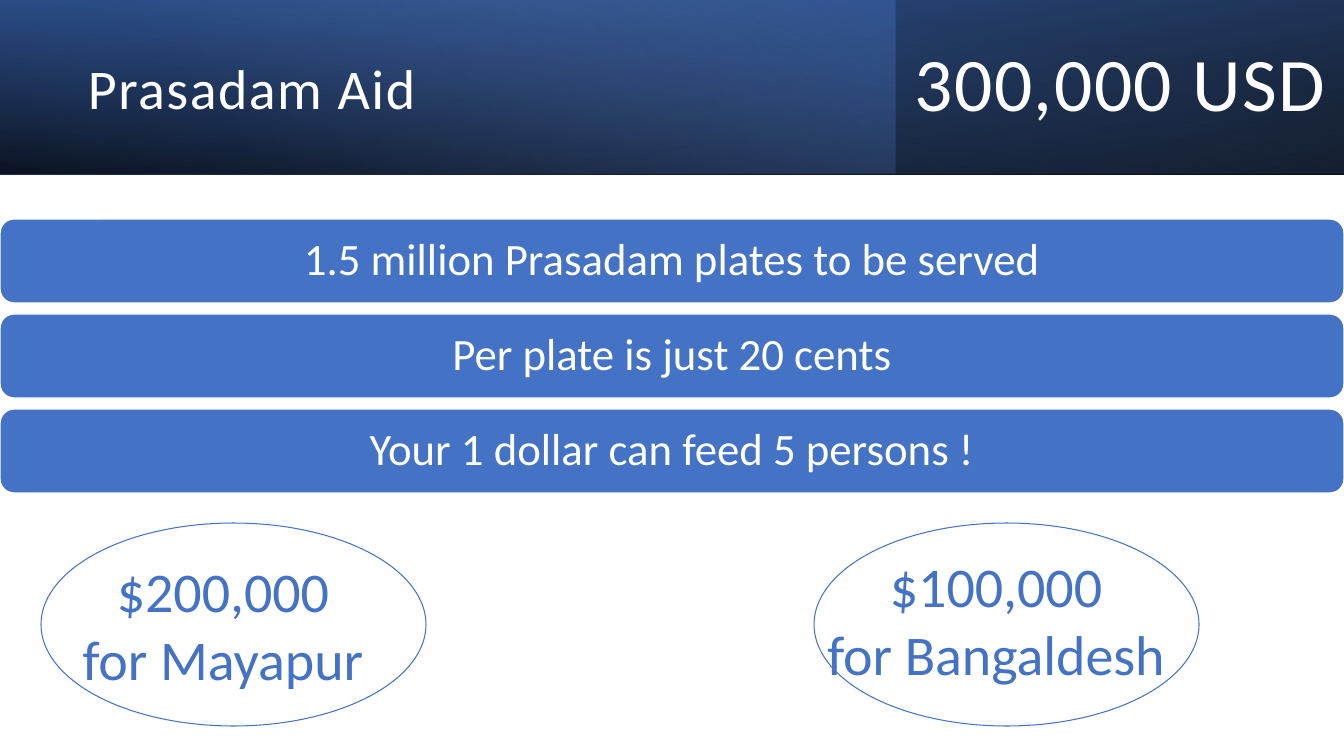
from lxml import etree
from pptx import Presentation
from pptx import util as u
from pptx.dml.color import RGBColor
from pptx.enum import shapes, text
from pptx.oxml import ns

PX = 914400 / 100.8
WHITE = RGBColor(0xFF, 0xFF, 0xFF)
BLUE = RGBColor(0x44, 0x72, 0xC4)
NAVY = RGBColor(0x2F, 0x55, 0x97)
PALE = RGBColor(0x8F, 0xAA, 0xDC)
BLACK = RGBColor(0, 0, 0)
KIND = shapes.MSO_SHAPE

deck = Presentation()
deck.slide_width, deck.slide_height = u.Inches(13.333), u.Inches(7.5)
slide = deck.slides.add_slide(deck.slide_layouts[6])


def add(kind, *box):
    area = [round(n * PX) for n in box]
    if kind is None:
        return slide.shapes.add_textbox(*area)
    shape = slide.shapes.add_shape(kind, *area)
    shape.shadow.inherit = False
    return shape


def write(shape, words, size, color, align, lead=0.9, track=0):
    frame = shape.text_frame
    frame.text = words
    frame.word_wrap = True
    frame.vertical_anchor = text.MSO_ANCHOR.MIDDLE
    for para in frame.paragraphs:
        para.alignment = align
        para.line_spacing = lead
        for run in para.runs:
            run.font.name = "Calibri"
            run.font.size = u.Pt(size)
            run.font.color.rgb = color
            if track:
                run.font._element.set("spc", str(track))
    return frame


LEFT, MID = text.PP_ALIGN.LEFT, text.PP_ALIGN.CENTER

layers = [
    (1344, 180, True, 100, [(0, BLACK, 96), (100, NAVY, 100)]),
    (896, 0, False, 140, [(0, BLUE, 41), (74, PALE, 0)]),
    (1344, 0, True, 260, [(0, BLACK, 63), (78, BLUE, 15)]),
]
for width, turn, flip, angle, stops in layers:
    band = add(KIND.RECTANGLE, 0, 0, width, 174)
    band.rotation = turn
    band.line.fill.background()
    props = band._element.spPr
    if flip:
        props.xfrm.set("flipH", "1")
    grad = etree.Element(ns.qn("a:gradFill"), rotWithShape="1")
    row = etree.SubElement(grad, ns.qn("a:gsLst"))
    for pos, color, alpha in stops:
        stop = etree.SubElement(row, ns.qn("a:gs"), pos=str(pos * 1000))
        tint = etree.SubElement(stop, ns.qn("a:srgbClr"), val=str(color))
        etree.SubElement(tint, ns.qn("a:alpha"), val=str(alpha * 1000))
    etree.SubElement(grad, ns.qn("a:lin"), ang=str(angle * 60000), scaled="0")
    props.find(ns.qn("a:prstGeom")).addnext(grad)

write(add(None, 78, 27, 778, 128), "Prasadam Aid", 40, WHITE, LEFT, track=110)
write(add(None, 896, 0, 448, 174), "300,000 USD", 54, WHITE, MID, track=110)

facts = [
    "1.5 million Prasadam plates to be served",
    "Per plate is just 20 cents",
    "Your 1 dollar can feed 5 persons !",
]
for i, fact in enumerate(facts):
    bar = add(KIND.ROUNDED_RECTANGLE, 0, 219 + 95 * i, 1344, 84)
    bar.fill.solid()
    bar.fill.fore_color.rgb = BLUE
    bar.line.color.rgb = WHITE
    bar.line.width = u.Pt(1)
    write(bar, fact, 32, WHITE, MID)

shares = [
    (41, 82, 551, 304, "$200,000\nfor Mayapur"),
    (814, 809, 546, 396, "$100,000\nfor Bangaldesh"),
]
for left, start, top, width, words in shares:
    oval = add(KIND.OVAL, left, 523, 385, 203)
    oval.fill.background()
    oval.line.color.rgb = BLUE
    oval.line.width = u.Pt(0.75)
    label = add(None, start, top, width, 146)
    frame = write(label, words, 40, BLUE, MID, lead=1.0)
    frame.margin_left = frame.margin_right = 0
    first = frame.paragraphs[0]._p.get_or_add_pPr()
    first.set("marR", str(round(22 * PX)))

deck.save("out.pptx")
